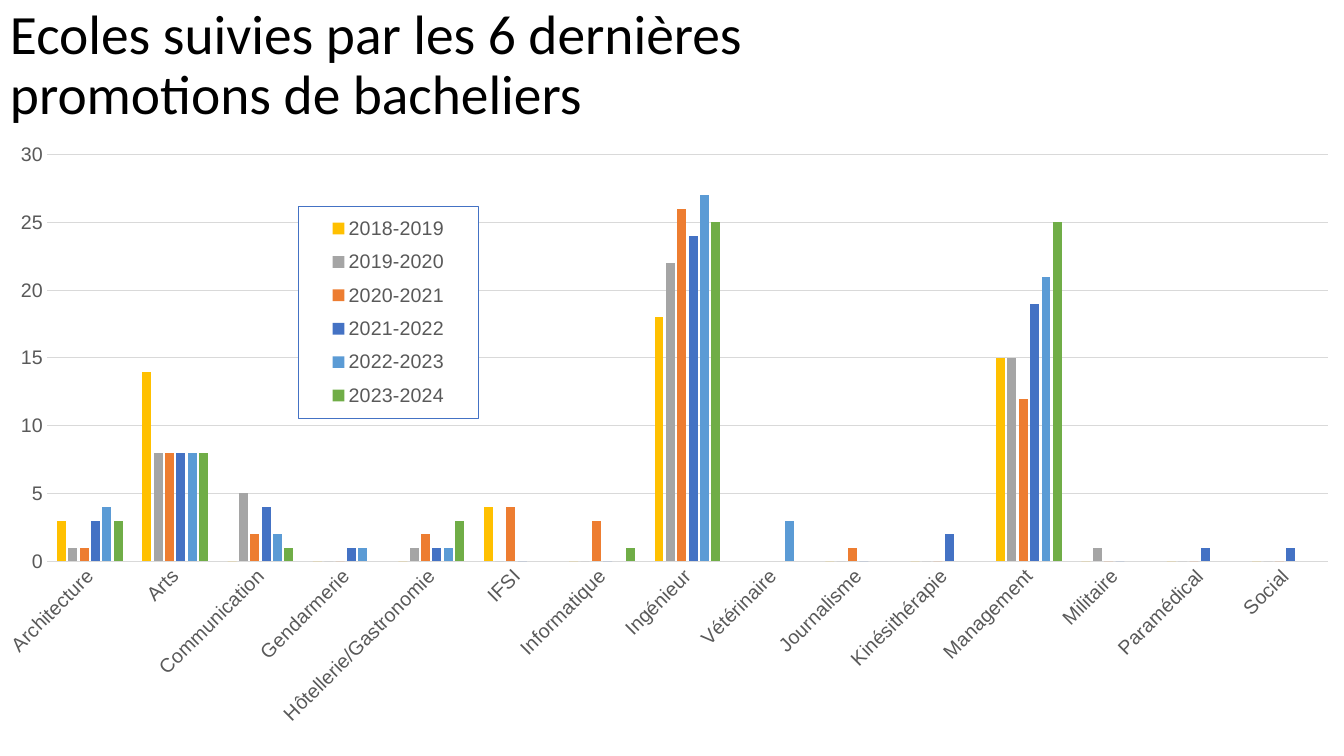
from pptx import Presentation
from pptx.chart.data import CategoryChartData
from pptx.dml.color import RGBColor
from pptx.enum.chart import XL_CHART_TYPE, XL_LEGEND_POSITION, XL_TICK_MARK
from pptx.enum.text import MSO_ANCHOR, MSO_AUTO_SIZE
from pptx.oxml import parse_xml
from pptx.oxml.ns import nsdecls, qn
from pptx.util import Inches, Pt

CLUSTERED = XL_CHART_TYPE.COLUMN_CLUSTERED
LEGEND_BOTTOM = XL_LEGEND_POSITION.BOTTOM
NO_TICK = XL_TICK_MARK.NONE
MIDDLE = MSO_ANCHOR.MIDDLE
NO_AUTOFIT = MSO_AUTO_SIZE.NONE

BLACK = RGBColor(0x00, 0x00, 0x00)
LABEL_GREY = RGBColor(0x59, 0x59, 0x59)
GRID_GREY = RGBColor(0xD9, 0xD9, 0xD9)
GOLD = RGBColor(0xFF, 0xC0, 0x00)
GREY = RGBColor(0xA5, 0xA5, 0xA5)
ORANGE = RGBColor(0xED, 0x7D, 0x31)
BLUE = RGBColor(0x44, 0x72, 0xC4)
SKY = RGBColor(0x5B, 0x9B, 0xD5)
GREEN = RGBColor(0x70, 0xAD, 0x47)

SCHOOLS = [
    "Architecture", "Arts", "Communication", "Gendarmerie",
    "Hôtellerie/Gastronomie", "IFSI", "Informatique", "Ingénieur",
    "Vétérinaire", "Journalisme", "Kinésithérapie", "Management",
    "Militaire", "Paramédical", "Social",
]
NA = None
PROMOTIONS = [
    ("2018-2019", GOLD, [3, 14, 0, 0, 0, 4, 0, 18, NA, 0, 0, 15, 0, 0, 0]),
    ("2019-2020", GREY, [1, 8, 5, 0, 1, 0, 0, 22, NA, 0, 0, 15, 1, 0, 0]),
    ("2020-2021", ORANGE, [1, 8, 2, 0, 2, 4, 3, 26, NA, 1, 0, 12, 0, 0, 0]),
    ("2021-2022", BLUE, [3, 8, 4, 1, 1, 0, 0, 24, NA, 0, 2, 19, 0, 1, 1]),
    ("2022-2023", SKY, [4, 8, 2, 1, 1, NA, NA, 27, 3, NA, NA, 21, NA, NA, NA]),
    ("2023-2024", GREEN, [3, 8, 1, NA, 3, NA, 1, 25, NA, NA, NA, 25, NA, NA, NA]),
]


def manual_layout(x, y, width, height, inner=False):
    """Return a c:layout element; lengths are fractions of the chart."""
    target = '<c:layoutTarget val="inner"/>' if inner else ""
    return parse_xml(
        f'<c:layout {nsdecls("c")}><c:manualLayout>{target}'
        '<c:xMode val="edge"/><c:yMode val="edge"/>'
        f'<c:x val="{x}"/><c:y val="{y}"/><c:w val="{width}"/><c:h val="{height}"/>'
        "</c:manualLayout></c:layout>"
    )


def remove_layout(element):
    for layout in element.findall(qn("c:layout")):
        element.remove(layout)


class SlideBuilder:
    def __init__(self, slide, title_font="Calibri", chart_font="Arial"):
        self.slide = slide
        self.title_font = title_font
        self.chart_font = chart_font

    def style_font(self, font, size=14, color=LABEL_GREY, name=None):
        font.name = name or self.chart_font
        font.size = Pt(size)
        font.bold = False
        font.color.rgb = color

    def add_text(self, text, left, top, width, height, *, size, color=BLACK,
                 line_spacing=1.0, bottom_inset=0.05):
        box = self.slide.shapes.add_textbox(
            Inches(left), Inches(top), Inches(width), Inches(height))
        frame = box.text_frame
        frame.word_wrap = True
        frame.auto_size = NO_AUTOFIT
        frame.vertical_anchor = MIDDLE
        frame.margin_bottom = Inches(bottom_inset)
        para = frame.paragraphs[0]
        para.line_spacing = line_spacing
        span = para.add_run()
        span.text = text
        self.style_font(span.font, size, color, self.title_font)

    def add_column_chart(self, categories, series_rows, left, top, width, height):
        data = CategoryChartData()
        data.categories = categories
        for name, _, values in series_rows:
            data.add_series(name, values)
        chart = self.slide.shapes.add_chart(
            CLUSTERED, Inches(left), Inches(top), Inches(width), Inches(height), data
        ).chart
        chart.has_title = False
        self.style_font(chart.font, color=BLACK)

        plot = chart.plots[0]
        plot.gap_width = 219
        plot.overlap = -27
        plot.vary_by_categories = False
        for series, (_, color, _) in zip(plot.series, series_rows):
            series.format.fill.solid()
            series.format.fill.fore_color.rgb = color
            series.invert_if_negative = False

        plot_area = chart._chartSpace.chart.plotArea
        remove_layout(plot_area)
        plot_area.insert(0, manual_layout(0.035, 0.03, 0.953, 0.656, inner=True))
        self.style_axes(chart)
        return chart

    def style_axes(self, chart):
        for axis in (chart.category_axis, chart.value_axis):
            axis.major_tick_mark = NO_TICK
            axis.minor_tick_mark = NO_TICK
            self.style_font(axis.tick_labels.font)

        schools = chart.category_axis
        schools.format.line.color.rgb = GRID_GREY
        schools.format.line.width = Pt(0.75)
        body = schools._element.find(qn("c:txPr")).find(qn("a:bodyPr"))
        body.set("rot", str(-45 * 60000))
        body.set("vert", "horz")

        counts = chart.value_axis
        counts.minimum_scale = 0
        counts.maximum_scale = 30
        counts.major_unit = 5
        counts.format.line.fill.background()
        counts.has_major_gridlines = True
        grid = counts.major_gridlines.format.line
        grid.color.rgb = GRID_GREY
        grid.width = Pt(0.75)

    def add_legend(self, chart, x, y, width, height):
        """Place a framed legend over the plot; lengths are chart fractions."""
        chart.has_legend = True
        legend = chart.legend
        legend.position = LEGEND_BOTTOM
        legend.include_in_layout = False
        self.style_font(legend.font)
        element = legend._element
        remove_layout(element)
        element.find(qn("c:overlay")).addprevious(manual_layout(x, y, width, height))
        element.find(qn("c:txPr")).addprevious(parse_xml(
            f'<c:spPr {nsdecls("c", "a")}>'
            '<a:solidFill><a:srgbClr val="FFFFFF"/></a:solidFill>'
            f'<a:ln w="{Pt(0.75)}"><a:solidFill><a:srgbClr val="{BLUE}"/></a:solidFill>'
            "</a:ln></c:spPr>"
        ))


def main():
    deck = Presentation()
    deck.slide_width = Inches(13.33)
    deck.slide_height = Inches(7.5)
    page = SlideBuilder(deck.slides.add_slide(deck.slide_layouts[6]))

    chart = page.add_column_chart(SCHOOLS, PROMOTIONS, 0, 1.35, 13.33, 6.15)
    page.add_legend(chart, 0.222, 0.113, 0.134, 0.342)
    page.add_text("Ecoles suivies par les 6 dernières promotions de bacheliers",
                  0, 0.46, 9.21, 1.04, size=39.6, line_spacing=0.9, bottom_inset=0.69)
    deck.save("out.pptx")


if __name__ == "__main__":
    main()
